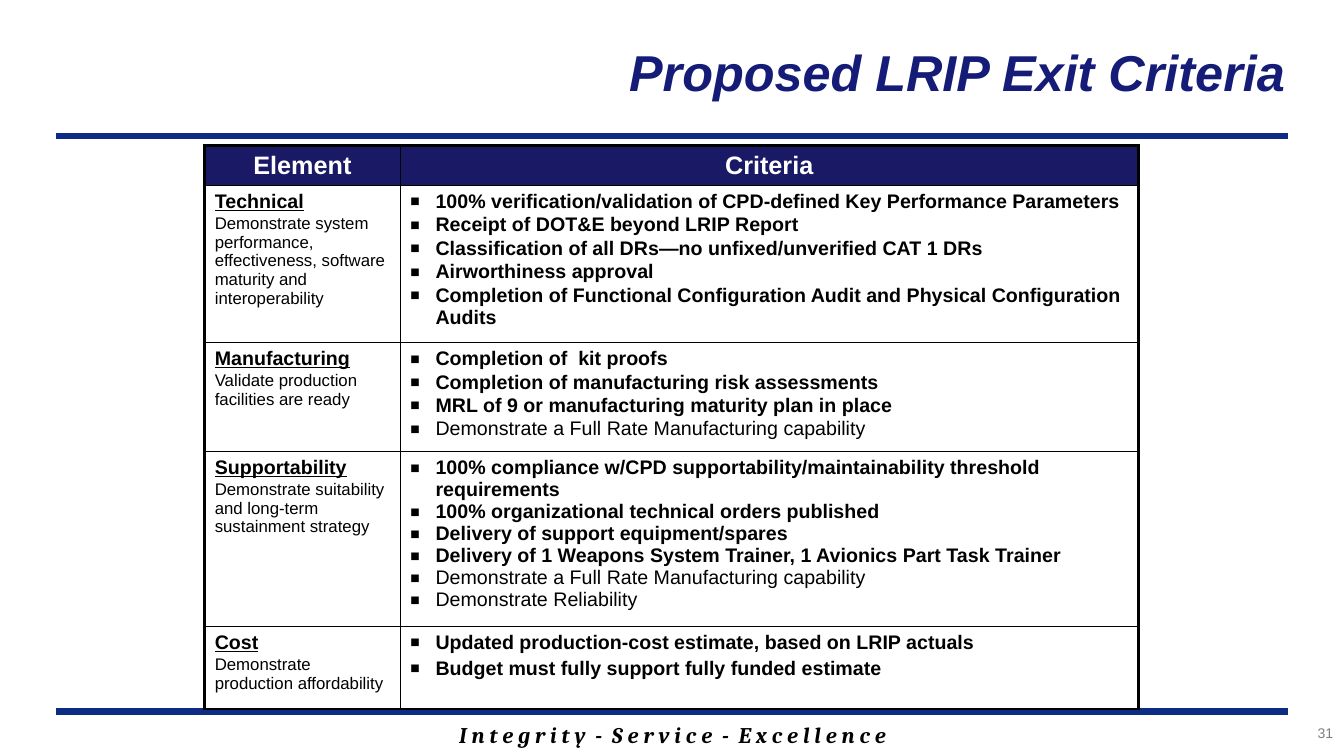
"""Build the slide listing the proposed LRIP exit criteria."""
from lxml import etree
from pptx import Presentation
from pptx.dml.color import RGBColor
from pptx.enum.shapes import MSO_CONNECTOR
from pptx.enum.text import MSO_ANCHOR, PP_ALIGN
from pptx.oxml.ns import qn
from pptx.util import Inches, Pt

COLORS = {"title": "151C77", "rule": "0C2D83", "header": "191966", "white": "FFFFFF",
          "black": "000000", "number": "7F7F7F"}

deck = Presentation()
deck.slide_width, deck.slide_height = Inches(13.33), Inches(7.5)
COL, ROW = deck.slide_width / 100, deck.slide_height / 100
slide = deck.slides.add_slide(deck.slide_layouts[5])


def write(frame, text, size, color="black", font="Arial", bold=False, italic=False,
          underline=False, align=PP_ALIGN.LEFT, before=0, bullet=False, first=True):
    paragraph = frame.paragraphs[0] if first else frame.add_paragraph()
    paragraph.alignment = align
    paragraph.space_before = Pt(0 if first else before)
    if bullet:
        properties = paragraph._p.get_or_add_pPr()
        properties.set("marL", str(Inches(0.25)))
        properties.set("indent", str(-Inches(0.25)))
        for tag, name, value in (("a:buSzPct", "val", "80000"),
                                 ("a:buFont", "typeface", "Arial"),
                                 ("a:buChar", "char", "■")):
            etree.SubElement(properties, qn(tag)).set(name, value)
    run = paragraph.add_run()
    run.text = text
    run.font.name, run.font.size = font, Pt(size)
    run.font.bold, run.font.italic, run.font.underline = bold, italic, underline
    run.font.color.rgb = RGBColor.from_string(COLORS[color])


def add_border(cell, position, side, width):
    line = etree.Element(qn(f"a:ln{side}"), w=str(Pt(width)))
    fill = etree.SubElement(line, qn("a:solidFill"))
    etree.SubElement(fill, qn("a:srgbClr"), val=COLORS["black"])
    cell._tc.get_or_add_tcPr().insert(position, line)


title = slide.shapes.title
title.left, title.top = int(18.23 * COL), int(1.07 * ROW)
title.width, title.height = int(78.17 * COL), int(16.67 * ROW)
title.text_frame.vertical_anchor = MSO_ANCHOR.MIDDLE
write(title.text_frame, "Proposed LRIP Exit Criteria", 36, color="title",
      bold=True, italic=True, align=PP_ALIGN.RIGHT)

for row in (18, 94.13):
    rule = slide.shapes.add_connector(MSO_CONNECTOR.STRAIGHT, int(4.2 * COL), int(row * ROW),
                                      int(95.87 * COL), int(row * ROW))
    rule.line.color.rgb = RGBColor.from_string(COLORS["rule"])
    rule.line.width = Pt(4.5)
    etree.SubElement(rule._element.spPr, qn("a:effectLst"))

motto = "I n t e g r i t y  -  S e r v i c e  -  E x c e l l e n c e"
for text, left, top, width, height, style in (
        (motto, 14.18, 94.67, 71.72, 4.93,
         dict(size=16, font="Cambria", bold=True, italic=True, align=PP_ALIGN.CENTER)),
        ("31", 87.4, 95.2, 12.53, 4.4,
         dict(size=10, color="number", align=PP_ALIGN.RIGHT))):
    footer = slide.shapes.add_textbox(int(left * COL), int(top * ROW),
                                      int(width * COL), int(height * ROW))
    footer.text_frame.word_wrap = True
    write(footer.text_frame, text, **style)

elements = [
    ("Technical",
     "Demonstrate system performance, effectiveness, software maturity and interoperability",
     1, ["100% verification/validation of CPD-defined Key Performance Parameters",
         "Receipt of DOT&E beyond LRIP Report",
         "Classification of all DRs—no unfixed/unverified CAT 1 DRs",
         "Airworthiness approval",
         "Completion of Functional Configuration Audit and Physical Configuration Audits"]),
    ("Manufacturing", "Validate production facilities are ready",
     1, ["Completion of  kit proofs",
         "Completion of manufacturing risk assessments",
         "MRL of 9 or manufacturing maturity plan in place",
         "Demonstrate a Full Rate Manufacturing capability"]),
    ("Supportability", "Demonstrate suitability and long-term sustainment strategy",
     0, ["100% compliance w/CPD supportability/maintainability threshold requirements",
         "100% organizational technical orders published",
         "Delivery of support equipment/spares",
         "Delivery of 1 Weapons System Trainer, 1 Avionics Part Task Trainer",
         "Demonstrate a Full Rate Manufacturing capability",
         "Demonstrate Reliability"]),
    ("Cost", "Demonstrate production affordability",
     2.8, ["Updated production-cost estimate, based on LRIP actuals",
           "Budget must fully support fully funded estimate"]),
]
column_widths = [14.55, 54.91]
row_heights = [5.33, 20.8, 14.4, 23.07, 10.93]
criteria_table = slide.shapes.add_table(
    len(row_heights), len(column_widths), int(15.23 * COL), int(19.2 * ROW),
    int(sum(column_widths) * COL), int(sum(row_heights) * ROW)).table
for column, width in zip(criteria_table.columns, column_widths):
    column.width = int(width * COL)
for row, height in zip(criteria_table.rows, row_heights):
    row.height = int(height * ROW)

for cell, heading in zip(criteria_table.rows[0].cells, ("Element", "Criteria")):
    cell.vertical_anchor = MSO_ANCHOR.MIDDLE
    write(cell.text_frame, heading, 18, color="white", bold=True, align=PP_ALIGN.CENTER)

for index, (element, goal, gap, criteria) in enumerate(elements, start=1):
    element_frame = criteria_table.cell(index, 0).text_frame
    write(element_frame, element, 14, bold=True, underline=True)
    write(element_frame, goal, 12, before=1, first=False)
    criteria_frame = criteria_table.cell(index, 1).text_frame
    for number, criterion in enumerate(criteria):
        write(criteria_frame, criterion, 14, bold=not criterion.startswith("Demonstrate"),
              before=gap, bullet=True, first=number == 0)

last_row, last_column = len(row_heights) - 1, len(column_widths) - 1
for r, row in enumerate(criteria_table.rows):
    for c, cell in enumerate(row.cells):
        cell.fill.solid()
        cell.fill.fore_color.rgb = RGBColor.from_string(COLORS["white" if r else "header"])
        outer_edges = {"L": c == 0, "R": c == last_column, "T": r == 0, "B": r == last_row}
        for position, (side, outer) in enumerate(outer_edges.items()):
            add_border(cell, position, side, 2.25 if outer else 1)

deck.save("out.pptx")
